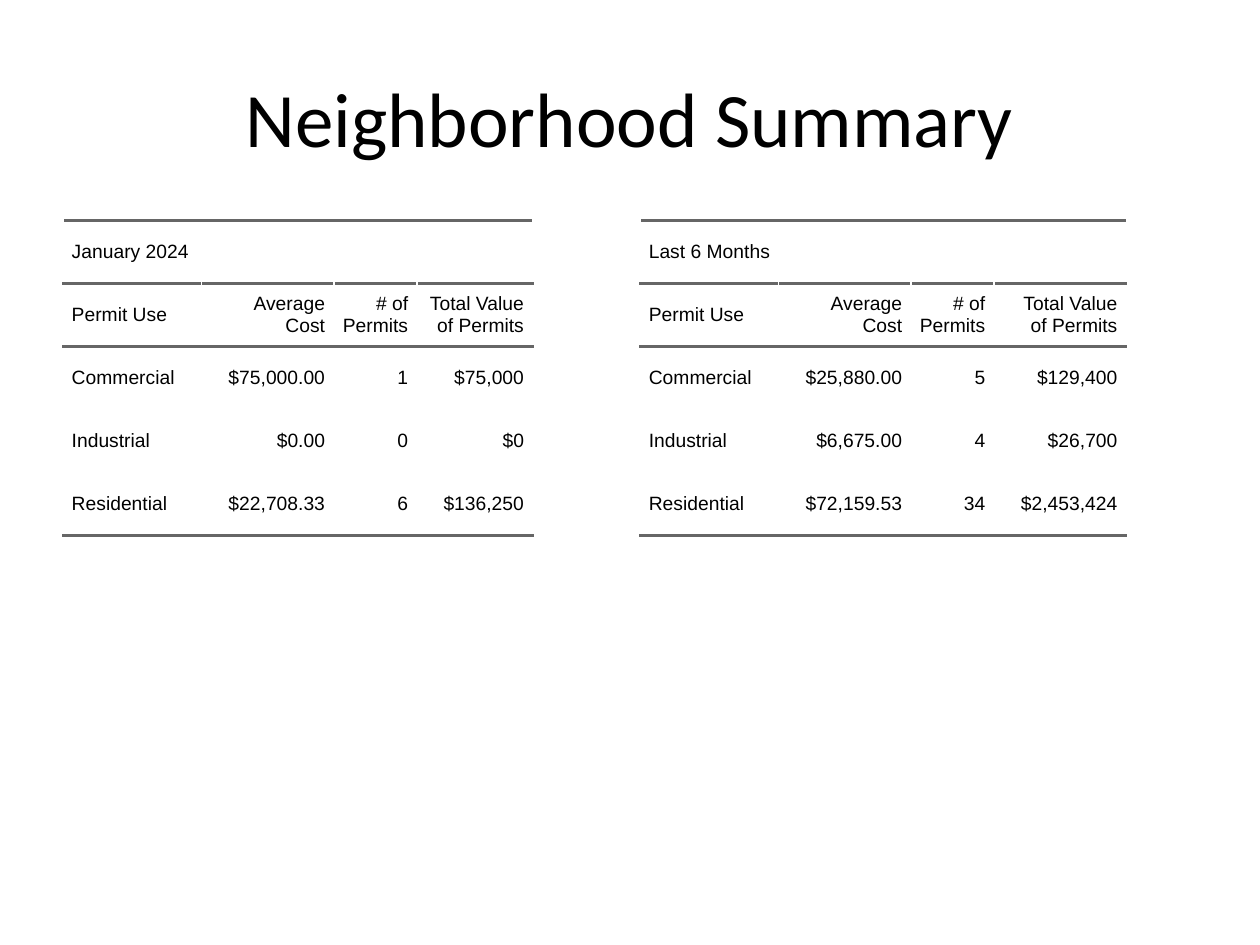
from lxml.etree import SubElement
from pptx import Presentation
from pptx.dml.color import RGBColor
from pptx.enum.text import MSO_ANCHOR, PP_ALIGN
from pptx.oxml.ns import qn
from pptx.util import Pt

COLORS = {"text": "000000", "rule": "666666"}
HEADINGS = ("Permit Use", "Average Cost", "# of Permits", "Total Value of Permits")
ROW_HEIGHT = 36
PADDING = 5

JANUARY = (
    ("Commercial", "$75,000.00", "1", "$75,000"),
    ("Industrial", "$0.00", "0", "$0"),
    ("Residential", "$22,708.33", "6", "$136,250"),
)
SIX_MONTHS = (
    ("Commercial", "$25,880.00", "5", "$129,400"),
    ("Industrial", "$6,675.00", "4", "$26,700"),
    ("Residential", "$72,159.53", "34", "$2,453,424"),
)


def place_title(slide, text, left, top, width, height):
    title = slide.shapes.title
    title.left, title.top = Pt(left), Pt(top)
    title.width, title.height = Pt(width), Pt(height)
    title.text_frame.text = text
    title.text_frame.vertical_anchor = MSO_ANCHOR.MIDDLE
    heading = title.text_frame.paragraphs[0]
    heading.alignment = PP_ALIGN.CENTER
    heading.font.name = "Calibri"
    heading.font.size = Pt(44)
    heading.font.color.rgb = RGBColor.from_string(COLORS["text"])


def add_rule(cell, side):
    rule = SubElement(cell._tc.get_or_add_tcPr(), qn(f"a:{side}"), w=str(Pt(1.5)))
    fill = SubElement(rule, qn("a:solidFill"))
    SubElement(fill, qn("a:srgbClr"), val=COLORS["rule"])


def format_cell(cell, text, alignment, sides):
    cell.margin_left = cell.margin_right = 0
    cell.margin_top = cell.margin_bottom = Pt(PADDING)
    cell.vertical_anchor = MSO_ANCHOR.MIDDLE
    for side in sides:
        add_rule(cell, side)
    cell.fill.background()
    cell.text = text
    entry = cell.text_frame.paragraphs[0]
    entry.alignment = alignment
    entry.space_before = entry.space_after = Pt(PADDING)
    entry.font.name = "Arial"
    entry.font.size = Pt(11)
    entry.font.color.rgb = RGBColor.from_string(COLORS["text"])
    indents = entry._p.get_or_add_pPr()
    for side in ("marL", "marR"):
        indents.set(side, str(Pt(PADDING)))
    indents.set("indent", "0")


def place_permits(slide, period, records, column_widths, left, top, width, height):
    rows = ((period, "", "", ""), HEADINGS, *records)
    frame = slide.shapes.add_table(
        len(rows), len(HEADINGS), Pt(left), Pt(top), Pt(width), Pt(height)
    )
    permits = frame.table
    permits.first_row = permits.horz_banding = False
    for column, column_width in zip(permits.columns, column_widths):
        column.width = Pt(column_width)
    for r, values in enumerate(rows):
        permits.rows[r].height = Pt(ROW_HEIGHT)
        if r < 2:
            sides = ("lnT", "lnB")
        elif r == len(rows) - 1:
            sides = ("lnB",)
        else:
            sides = ()
        for c, value in enumerate(values):
            alignment = PP_ALIGN.RIGHT if r and c else PP_ALIGN.LEFT
            format_cell(permits.cell(r, c), value, alignment, sides)
    permits.cell(0, 0).merge(permits.cell(0, len(HEADINGS) - 1))
    frame.width, frame.height = Pt(width), Pt(height)


def main():
    deck = Presentation()
    deck.slide_width, deck.slide_height = Pt(720), Pt(540)
    slide = deck.slides.add_slide(deck.slide_layouts[5])

    margin, top, width, height = 36, 126, 318.24, 356.4
    right_half = 720 - margin - width
    shared_widths = (79.2, 75.6, 47.5)
    place_permits(slide, "January 2024", JANUARY, (*shared_widths, 66.2),
                  margin, top, width, height)
    place_permits(slide, "Last 6 Months", SIX_MONTHS, (*shared_widths, 75.6),
                  right_half, top, width, height)
    place_title(slide, "Neighborhood Summary", margin, 21.6, 720 - 2 * margin, 90)
    deck.save("out.pptx")


if __name__ == "__main__":
    main()
